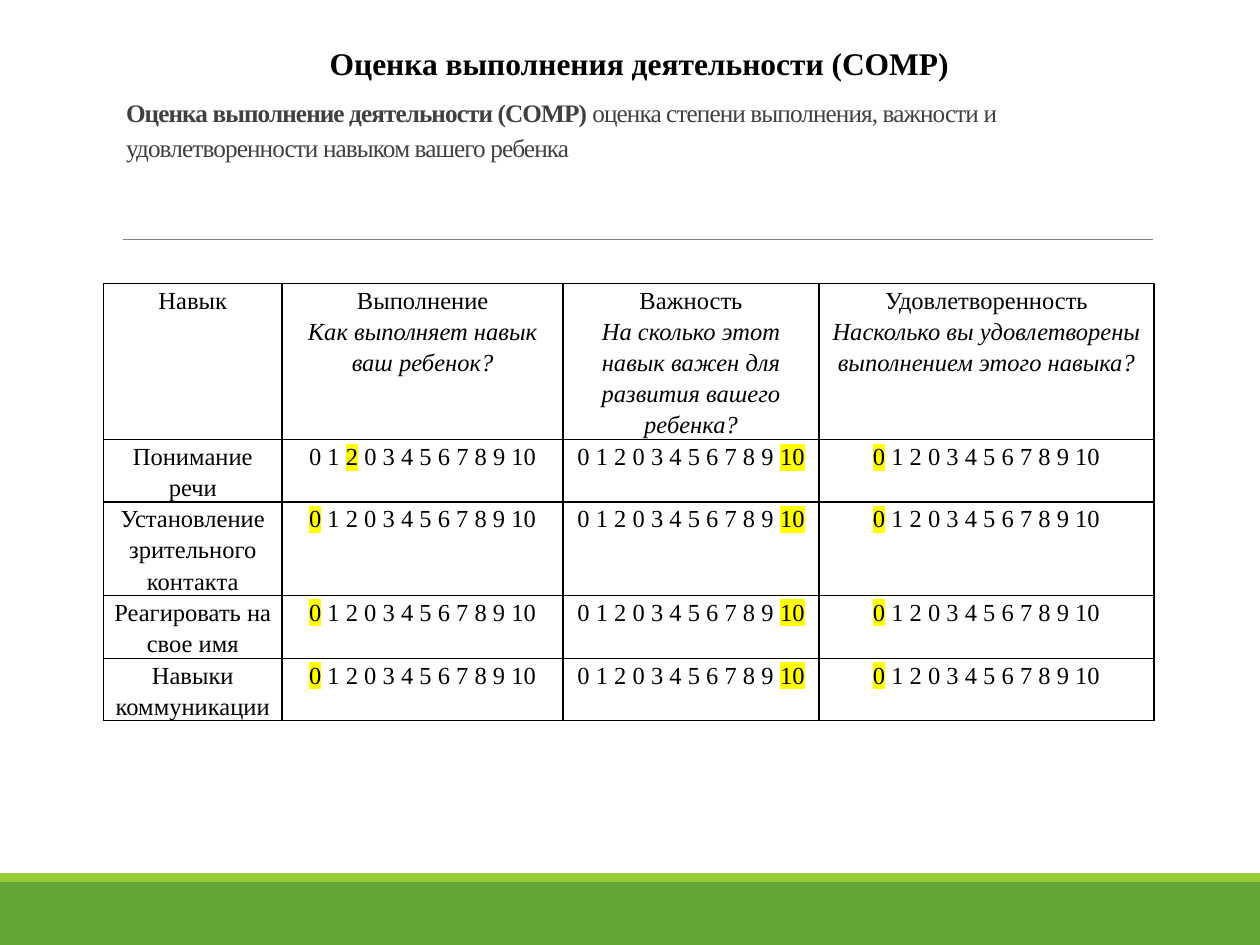
from typing import NamedTuple

from lxml import etree
from pptx import Presentation
from pptx.dml.color import RGBColor
from pptx.enum.shapes import MSO_CONNECTOR, MSO_SHAPE
from pptx.enum.text import MSO_ANCHOR, PP_ALIGN
from pptx.oxml.ns import qn
from pptx.util import Inches, Pt

RECTANGLE = MSO_SHAPE.RECTANGLE
STRAIGHT = MSO_CONNECTOR.STRAIGHT
TOP, MIDDLE = MSO_ANCHOR.TOP, MSO_ANCHOR.MIDDLE
LEFT, CENTER = PP_ALIGN.LEFT, PP_ALIGN.CENTER

FONT = "Times New Roman"
BLACK, GREY, RULE_GREY = "000000", "404040", "808080"
GREEN, LIME, YELLOW = "63A537", "99CB38", "FFFF00"
LINE_SPACING = 1.15


class Band(NamedTuple):
    top: float
    height: float
    color: str


class Column(NamedTuple):
    heading: str
    question: str
    width: float


class Skill(NamedTuple):
    name: str
    height: float
    marks: tuple[int, ...]  # position of the marked score in each column


BANDS = [Band(7, 0.5, GREEN), Band(6.93, 0.07, LIME)]
SCORES = "0 1 2 0 3 4 5 6 7 8 9 10".split()
LAST = len(SCORES) - 1
HEADER_HEIGHT = 1.24
COLUMNS = [
    Column("Навык", "", 1.42),
    Column("Выполнение", "Как выполняет навык ваш ребенок?", 2.23),
    Column("Важность", "На сколько этот навык важен для развития вашего ребенка?", 2.03),
    Column("Удовлетворенность", "Насколько вы удовлетворены выполнением этого навыка?", 2.66),
]
SKILLS = [
    Skill("Понимание речи", 0.49, (2, LAST, 0)),
    Skill("Установление зрительного контакта", 0.74, (0, LAST, 0)),
    Skill("Реагировать на свое имя", 0.5, (0, LAST, 0)),
    Skill("Навыки коммуникации", 0.49, (0, LAST, 0)),
]


def rgb(color: str) -> RGBColor:
    return RGBColor.from_string(color)


def format_paragraph(paragraph, size: float, color: str = BLACK, align=CENTER) -> None:
    paragraph.alignment = align
    paragraph.font.name = FONT
    paragraph.font.size = Pt(size)
    paragraph.font.color.rgb = rgb(color)


def add_span(paragraph, text: str):
    span = paragraph.add_run()
    span.text = text
    return span


def highlight(span) -> None:
    mark = etree.SubElement(span._r.get_or_add_rPr(), qn("a:highlight"))
    etree.SubElement(mark, qn("a:srgbClr"), val=YELLOW)


def draw_band(slide, band: Band) -> None:
    bar = slide.shapes.add_shape(
        RECTANGLE, 0, Inches(band.top), Inches(10), Inches(band.height))
    bar.shadow.inherit = False
    bar.fill.solid()
    bar.fill.fore_color.rgb = rgb(band.color)
    bar.line.fill.background()


def draw_rule(slide) -> None:
    rule = slide.shapes.add_connector(
        STRAIGHT, Inches(0.98), Inches(1.9), Inches(9.15), Inches(1.9))
    rule.line.color.rgb = rgb(RULE_GREY)
    rule.line.width = Pt(0.5)
    etree.SubElement(rule._element.spPr, qn("a:effectLst"))


def write_title(title) -> None:
    title.left, title.top = Inches(0.9), Inches(0.31)
    title.width, title.height = Inches(8.25), Inches(1.3)
    frame = title.text_frame
    frame.word_wrap = True
    frame.vertical_anchor = TOP
    frame.margin_top = Inches(0.43)
    paragraph = frame.paragraphs[0]
    format_paragraph(paragraph, 14.4, GREY, LEFT)
    paragraph.line_spacing = LINE_SPACING
    name = add_span(paragraph, "Оценка выполнение деятельности (COMP) ")
    name.font.bold = True
    meaning = add_span(
        paragraph,
        "оценка степени выполнения, важности и удовлетворенности навыком вашего ребенка")
    for span in (name, meaning):
        span._r.get_or_add_rPr().set("spc", "-50")


def draw_heading(slide) -> None:
    box = slide.shapes.add_textbox(Inches(1.9), Inches(0.3), Inches(6.35), Inches(0.4))
    frame = box.text_frame
    frame.word_wrap = True
    frame.vertical_anchor = MIDDLE
    paragraph = frame.paragraphs[0]
    format_paragraph(paragraph, 18)
    paragraph.font.bold = True
    add_span(paragraph, "Оценка выполнения деятельности (COMP)")


def format_cell(cell) -> None:
    """Set insets, black borders and no fill, and format the cell's paragraphs."""
    cell.margin_left = cell.margin_right = Inches(0.07)
    cell.margin_top = cell.margin_bottom = 0
    properties = cell._tc.get_or_add_tcPr()
    for side in ("a:lnL", "a:lnR", "a:lnT", "a:lnB"):
        border = etree.SubElement(properties, qn(side), w=str(Pt(1)))
        fill = etree.SubElement(border, qn("a:solidFill"))
        etree.SubElement(fill, qn("a:srgbClr"), val=BLACK)
    cell.fill.background()
    for paragraph in cell.text_frame.paragraphs:
        format_paragraph(paragraph, 14)
        paragraph.line_spacing = LINE_SPACING


def write_scores(paragraph, marked: int) -> None:
    before = "".join(f"{score} " for score in SCORES[:marked])
    after = "".join(f" {score}" for score in SCORES[marked + 1:])
    if before:
        add_span(paragraph, before)
    highlight(add_span(paragraph, SCORES[marked]))
    if after:
        add_span(paragraph, after)


def draw_table(slide) -> None:
    heights = [HEADER_HEIGHT] + [skill.height for skill in SKILLS]
    widths = [column.width for column in COLUMNS]
    table = slide.shapes.add_table(
        len(heights), len(widths), Inches(0.82), Inches(2.25),
        Inches(sum(widths)), Inches(sum(heights))).table
    table.first_row = table.horz_banding = False
    for row, height in zip(table.rows, heights):
        row.height = Inches(height)

    for index, column in enumerate(COLUMNS):
        table.columns[index].width = Inches(column.width)
        frame = table.cell(0, index).text_frame
        add_span(frame.paragraphs[0], column.heading)
        if column.question:
            question = frame.add_paragraph()
            question.font.italic = True
            add_span(question, column.question)

    for row, skill in enumerate(SKILLS, start=1):
        add_span(table.cell(row, 0).text_frame.paragraphs[0], skill.name)
        for index, marked in enumerate(skill.marks, start=1):
            write_scores(table.cell(row, index).text_frame.paragraphs[0], marked)

    for cell in table.iter_cells():
        format_cell(cell)


def main() -> None:
    deck = Presentation()
    deck.slide_width, deck.slide_height = Inches(10), Inches(7.5)
    slide = deck.slides.add_slide(deck.slide_layouts.get_by_name("Title Only"))
    for band in BANDS:
        draw_band(slide, band)
    draw_rule(slide)
    write_title(slide.shapes.title)
    draw_table(slide)
    draw_heading(slide)
    deck.save("out.pptx")


if __name__ == "__main__":
    main()
